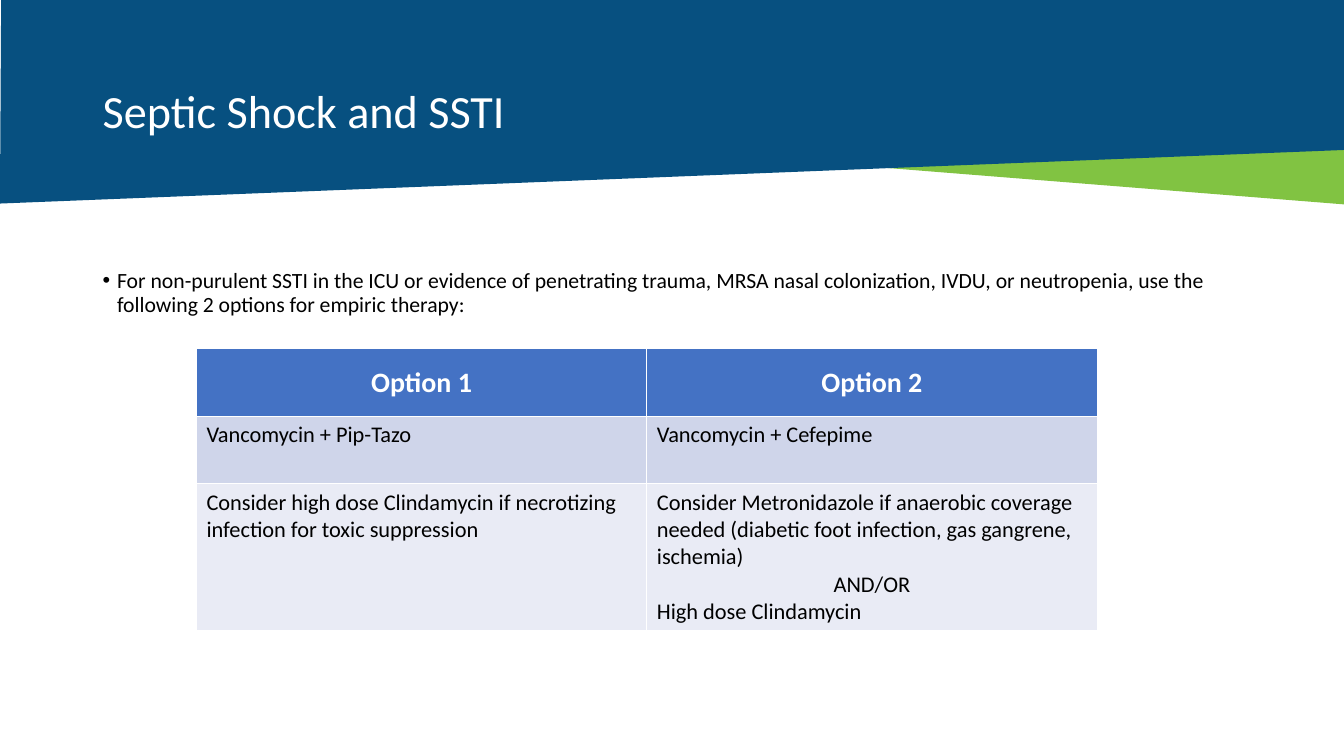
"""Build the slide on empiric therapy for septic shock with SSTI."""
from dataclasses import dataclass

from lxml.etree import SubElement
from pptx import Presentation
from pptx.dml.color import RGBColor
from pptx.enum.shapes import MSO_SHAPE
from pptx.enum.text import MSO_ANCHOR, PP_ALIGN
from pptx.oxml.ns import qn
from pptx.util import Cm, Pt


@dataclass(frozen=True)
class Theme:
    """Colours, font and type sizes of the slide."""
    font: str = "Calibri"
    banner: str = "075080"
    accent: str = "81C342"
    white: str = "FFFFFF"
    black: str = "000000"
    row_fills: tuple = ("4472C4", "CFD5EA", "E9EBF5")
    title_size: float = 33
    body_size: float = 15.5
    header_size: float = 20
    cell_size: float = 16


theme = Theme()


def format_runs(text_frame, size, color, bold=False):
    """Apply one font to every run of a text frame."""
    for paragraph in text_frame.paragraphs:
        for run in paragraph.runs:
            run.font.name = theme.font
            run.font.size = Pt(size)
            run.font.bold = bold
            run.font.color.rgb = RGBColor.from_string(color)


def add_text(left, top, width, height, text, size, color):
    """Add a wrapped text box and return its text frame."""
    text_frame = slide.shapes.add_textbox(Cm(left), Cm(top), Cm(width), Cm(height)).text_frame
    text_frame.word_wrap = True
    text_frame.text = text
    text_frame.paragraphs[0].line_spacing = 0.9
    format_runs(text_frame, size, color)
    return text_frame


presentation = Presentation()
presentation.slide_width = Cm(33.87)
presentation.slide_height = Cm(19.05)
slide = presentation.slides.add_slide(presentation.slide_layouts[6])

wedge = slide.shapes.add_shape(MSO_SHAPE.RIGHT_TRIANGLE, Cm(16.05), Cm(3.73), Cm(17.82), Cm(1.42))
wedge.rotation = 180
builder = slide.shapes.build_freeform(Cm(0.03), 0)
banner_corners = [(33.87, 0), (33.87, 3.78), (0, 5.13)]
builder.add_line_segments([(Cm(x), Cm(y)) for x, y in banner_corners])
banner = builder.convert_to_shape()
for shape, color in ((wedge, theme.accent), (banner, theme.banner)):
    shape.shadow.inherit = False
    shape.fill.solid()
    shape.fill.fore_color.rgb = RGBColor.from_string(color)
    shape.line.fill.background()

title = add_text(2.34, 1.02, 29.21, 3.68, "Septic Shock and SSTI", theme.title_size, theme.white)
title.vertical_anchor = MSO_ANCHOR.MIDDLE

introduction = add_text(
    2.34, 6.68, 29.21, 2.34,
    "For non-purulent SSTI in the ICU or evidence of penetrating trauma, MRSA nasal "
    "colonization, IVDU, or neutropenia, use the following 2 options for empiric therapy:",
    theme.body_size, theme.black)
bullet_paragraph = introduction.paragraphs[0]
bullet_paragraph.space_before = Pt(5.6)
properties = bullet_paragraph._p.get_or_add_pPr()
properties.set("marL", str(Cm(0.36)))
properties.set("indent", str(-Cm(0.36)))
SubElement(properties, qn("a:buFont")).set("typeface", "Arial")
SubElement(properties, qn("a:buChar")).set("char", "•")

therapy_rows = [
    ("Option 1", "Option 2"),
    ("Vancomycin + Pip-Tazo", "Vancomycin + Cefepime"),
    ("Consider high dose Clindamycin if necrotizing infection for toxic suppression",
     "Consider Metronidazole if anaerobic coverage needed "
     "(diabetic foot infection, gas gangrene, ischemia)\nAND/OR\nHigh dose Clindamycin"),
]
row_heights = (1.7, 1.7, 3.71)
table = slide.shapes.add_table(3, 2, Cm(4.95), Cm(8.79), Cm(22.7), Cm(sum(row_heights))).table
for row_index, (texts, height, fill) in enumerate(zip(therapy_rows, row_heights, theme.row_fills)):
    table.rows[row_index].height = Cm(height)
    for column_index, text in enumerate(texts):
        cell = table.cell(row_index, column_index)
        cell.fill.solid()
        cell.fill.fore_color.rgb = RGBColor.from_string(fill)
        cell.text_frame.text = text
        if row_index == 0:
            cell.vertical_anchor = MSO_ANCHOR.MIDDLE
            format_runs(cell.text_frame, theme.header_size, theme.white, bold=True)
        else:
            format_runs(cell.text_frame, theme.cell_size, theme.black)
        for paragraph in cell.text_frame.paragraphs:
            if row_index == 0 or paragraph.text == "AND/OR":
                paragraph.alignment = PP_ALIGN.CENTER

presentation.save("out.pptx")
